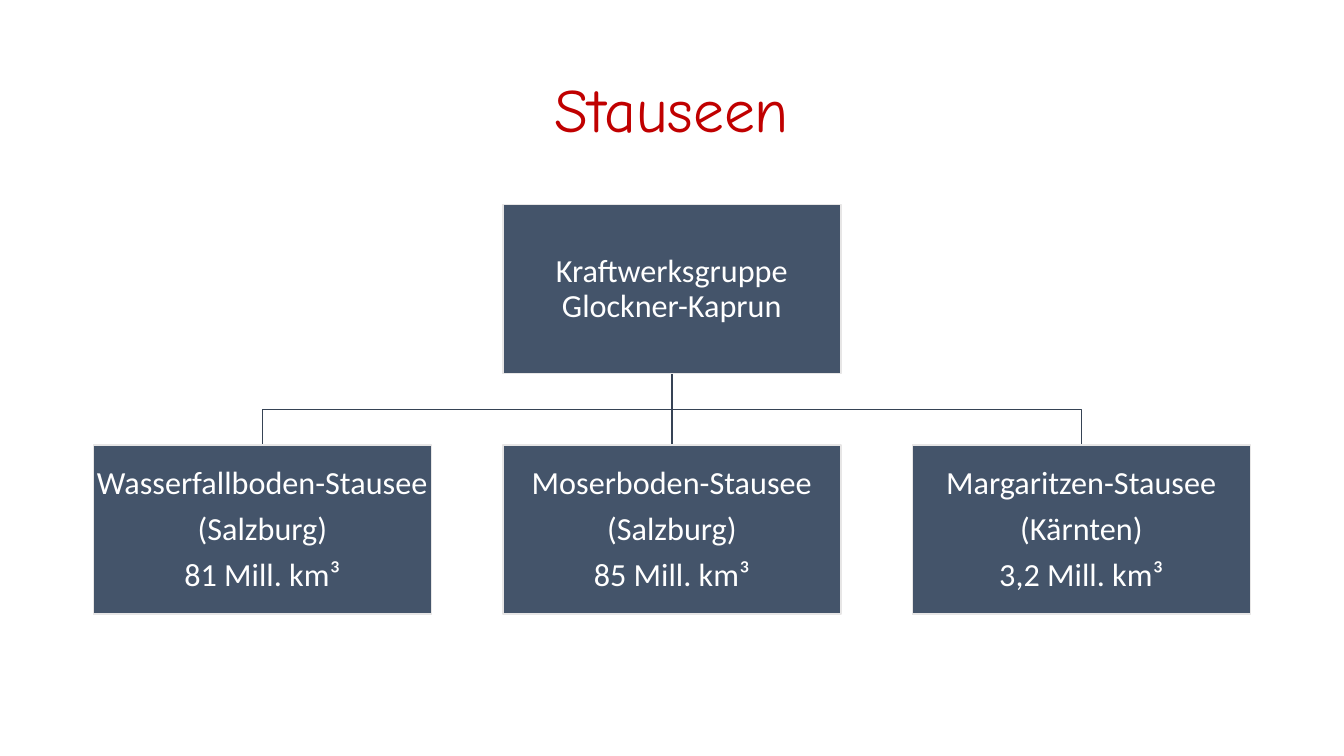
from pptx import Presentation
from pptx.dml.color import RGBColor
from pptx.enum.shapes import MSO_CONNECTOR, MSO_SHAPE
from pptx.enum.text import MSO_ANCHOR, PP_ALIGN
from pptx.oxml.ns import qn
from pptx.util import Pt
from lxml import etree

PX = 9525
RECTANGLE = MSO_SHAPE.RECTANGLE
STRAIGHT = MSO_CONNECTOR.STRAIGHT
MIDDLE = MSO_ANCHOR.MIDDLE
CENTER = PP_ALIGN.CENTER

COLORS = {"title": "C00000", "box": "44546A", "border": "E7E6E6",
          "branch": "364355", "label": "FFFFFF"}
TITLE_FONT = {"name": "Comic Neue", "size": Pt(44)}
LABEL_FONT = {"name": "Calibri", "size": Pt(23)}
PARENT = ["Kraftwerksgruppe Glockner-Kaprun"]
RESERVOIRS = [
    ["Wasserfallboden-Stausee", "(Salzburg)", "81 Mill. km³"],
    ["Moserboden-Stausee", "(Salzburg)", "85 Mill. km³"],
    ["Margaritzen-Stausee", "(Kärnten)", "3,2 Mill. km³"],
]


def color(name):
    """Return the named colour."""
    return RGBColor.from_string(COLORS[name])


def set_attributes(target, values):
    """Set each attribute of the target from a dict."""
    for name, value in values.items():
        setattr(target, name, value)


def write_text(shape, lines, font, color_name, inset, space_after):
    """Fill a shape with centred paragraphs."""
    frame = shape.text_frame
    sides = ("margin_left", "margin_top", "margin_right", "margin_bottom")
    set_attributes(frame, {"word_wrap": True, "vertical_anchor": MIDDLE,
                           **dict.fromkeys(sides, inset * PX)})
    for index, line in enumerate(lines):
        para = frame.add_paragraph() if index else frame.paragraphs[0]
        set_attributes(para, {"alignment": CENTER, "line_spacing": 0.9,
                              "space_after": Pt(space_after)})
        span = para.add_run()
        span.text = line
        set_attributes(span.font, font)
        span.font.color.rgb = color(color_name)


def add_title(page, left, top, width, height):
    """Place the slide title in its box."""
    box = page.shapes.add_textbox(left * PX, top * PX, width * PX, height * PX)
    write_text(box, ["Stauseen"], TITLE_FONT, "title", 5, 0)


def add_node(page, lines, left, top, width, height):
    """Place one labelled box of the chart."""
    box = page.shapes.add_shape(RECTANGLE, left * PX, top * PX, width * PX, height * PX)
    box.shadow.inherit = False
    box.fill.solid()
    box.fill.fore_color.rgb = color("box")
    box.line.color.rgb = color("border")
    box.line.width = Pt(1)
    write_text(box, lines, LABEL_FONT, "label", 2, 8)


def add_branch(page, start_x, start_y, end_x, end_y):
    """Link a parent's foot to a child's head, bending halfway down."""
    if start_x == end_x:
        branch = page.shapes.add_connector(
            STRAIGHT, start_x * PX, start_y * PX, end_x * PX, end_y * PX)
        etree.SubElement(branch.line._get_or_add_ln().getparent(), qn("a:effectLst"))
    else:
        bend_y = (start_y + end_y) // 2
        builder = page.shapes.build_freeform(start_x, start_y, scale=PX)
        builder.add_line_segments(
            [(start_x, bend_y), (end_x, bend_y), (end_x, end_y)], close=False)
        branch = builder.convert_to_shape()
        branch.fill.background()
        branch.shadow.inherit = False
    branch.line.color.rgb = color("branch")
    branch.line.width = Pt(1)


def add_hierarchy(page, left, top, width, height):
    """Place the power plant group above its row of reservoirs."""
    node_width, node_height = 322, 161
    step = (width - node_width) // (len(RESERVOIRS) - 1)
    center = left + width // 2
    row_top = top + height - node_height
    lefts = [left + index * step for index in range(len(RESERVOIRS))]
    for node_left in lefts:
        add_branch(page, center, top + node_height, node_left + node_width // 2, row_top)
    add_node(page, PARENT, center - node_width // 2, top, node_width, node_height)
    for lines, node_left in zip(RESERVOIRS, lefts):
        add_node(page, lines, node_left, row_top, node_width, node_height)


def main():
    """Build and save the deck."""
    deck = Presentation()
    set_attributes(deck, {"slide_width": 1280 * PX, "slide_height": 720 * PX})
    page = deck.slides.add_slide(deck.slide_layouts[6])
    add_title(page, 88, 38, 1104, 139)
    add_hierarchy(page, 89, 195, 1102, 390)
    deck.save("out.pptx")


if __name__ == "__main__":
    main()
